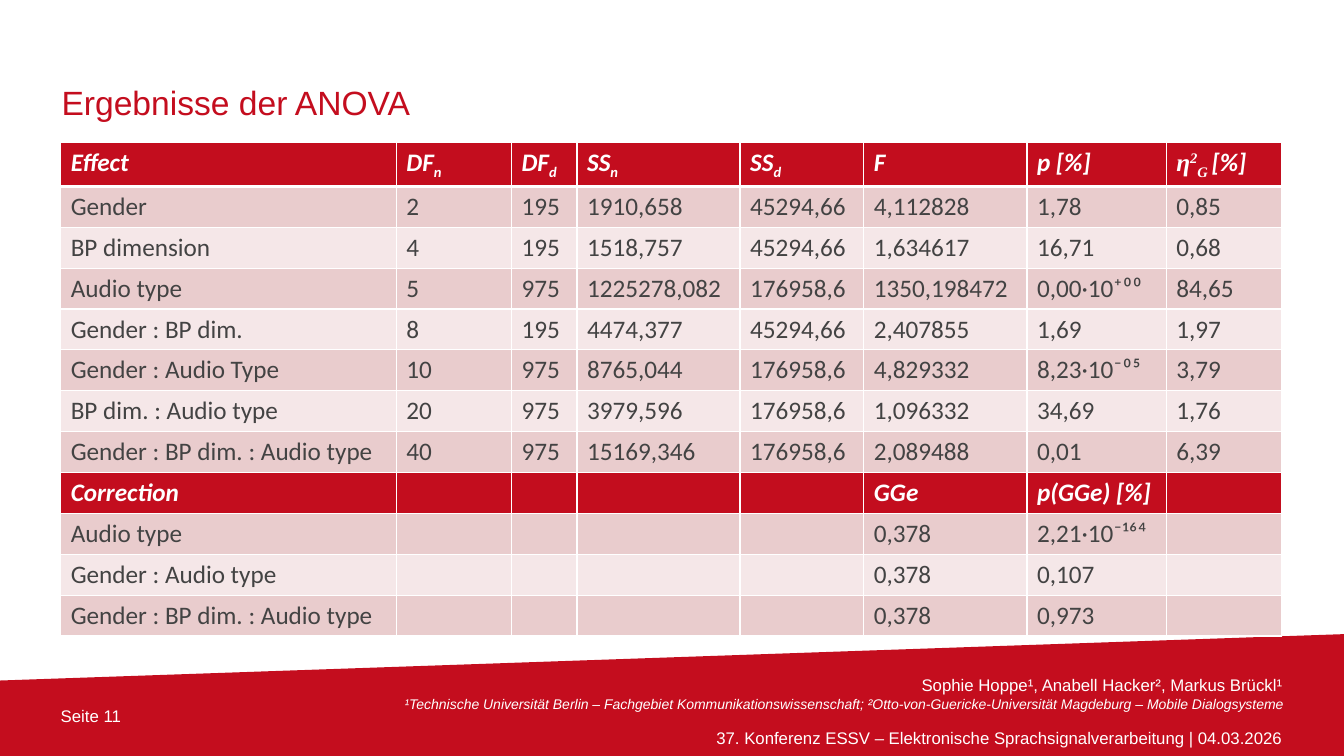
import pptx
import pptx.util
import pptx.dml.color
import pptx.enum.text
import pptx.oxml
import pptx.oxml.ns

Cm, Pt = pptx.util.Cm, pptx.util.Pt
Align = pptx.enum.text.PP_ALIGN
Anchor = pptx.enum.text.MSO_ANCHOR

# Content
TITLE = "Ergebnisse der ANOVA"
PAGE = "Seite 11"
# text, size, italic, space before
FOOTER = [
    ("Sophie Hoppe¹, Anabell Hacker², Markus Brückl¹", 12, False, 0),
    ("¹Technische Universität Berlin – Fachgebiet Kommunikationswissenschaft; "
     "²Otto-von-Guericke-Universität Magdeburg – Mobile Dialogsysteme", 10, True, 0),
    ("37. Konferenz ESSV – Elektronische Sprachsignalverarbeitung | 04.03.2026",
     12, False, 11.5),
]
SERIF = "Times New Roman"
# A cell is a string, or a list of (text, baseline %, font)
HEAD = [
    "Effect",
    [("DF", 0, "Calibri"), ("n", -25, "Calibri")],
    [("DF", 0, "Calibri"), ("d", -25, "Calibri")],
    [("SS", 0, "Calibri"), ("n", -25, "Calibri")],
    [("SS", 0, "Calibri"), ("d", -25, "Calibri")],
    "F",
    "p [%]",
    [("η", 0, SERIF), ("2", 30, SERIF), ("G ", -25, SERIF), ("[%]", 0, "Calibri")],
]
EFFECTS = [
    ("Gender", "2", "195", "1910,658", "45294,66", "4,112828", "1,78", "0,85"),
    ("BP dimension", "4", "195", "1518,757", "45294,66", "1,634617", "16,71", "0,68"),
    ("Audio type", "5", "975", "1225278,082", "176958,6", "1350,198472",
     "0,00·10⁺⁰⁰", "84,65"),
    ("Gender : BP dim.", "8", "195", "4474,377", "45294,66", "2,407855", "1,69", "1,97"),
    ("Gender : Audio Type", "10", "975", "8765,044", "176958,6", "4,829332",
     "8,23·10⁻⁰⁵", "3,79"),
    ("BP dim. : Audio type", "20", "975", "3979,596", "176958,6", "1,096332",
     "34,69", "1,76"),
    ("Gender : BP dim. : Audio type", "40", "975", "15169,346", "176958,6",
     "2,089488", "0,01", "6,39"),
]
# Only the first, F and p columns are used below the second heading
CHECKS = [
    ("Correction", "GGe", "p(GGe) [%]"),
    ("Audio type", "0,378", "2,21·10⁻¹⁶⁴"),
    ("Gender : Audio type", "0,378", "0,107"),
    ("Gender : BP dim. : Audio type", "0,378", "0,973"),
]
ROWS = [HEAD, *EFFECTS] + [(a, "", "", "", "", f, p, "") for a, f, p in CHECKS]
BANDS = {0, len(EFFECTS) + 1}
WIDTHS = [8.46, 2.9, 1.65, 4.11, 3.12, 4.11, 3.51, 2.9]
HIGH = 1.03
LEFT = 1.53
WIDE, TALL = 33.87, 19.05
RED, WHITE = "C40D1E", "FFFFFF"


def color(code):
    return pptx.dml.color.RGBColor.from_string(code)


def write(para, text, size, code, font="Arial", bold=False, slant=False):
    run = para.add_run()
    run.text = text
    face = run.font
    face.name, face.size, face.bold, face.italic = font, Pt(size), bold, slant
    face.color.rgb = color(code)
    return run


def frame(shape, anchor):
    body = shape.text_frame
    body.margin_left = body.margin_right = body.margin_top = body.margin_bottom = 0
    body.word_wrap = True
    body.auto_size = pptx.enum.text.MSO_AUTO_SIZE.NONE
    body.vertical_anchor = anchor
    return body


def border(cell, widths):
    props = cell._tc.get_or_add_tcPr()
    for side, width in zip("LRTB", widths):
        props.append(pptx.oxml.parse_xml(
            f'<a:ln{side} {pptx.oxml.ns.nsdecls("a")} w="{Pt(width)}"><a:solidFill>'
            f'<a:srgbClr val="{WHITE}"/></a:solidFill></a:ln{side}>'))


deck = pptx.Presentation()
deck.slide_width, deck.slide_height = Cm(WIDE), Cm(TALL)
slide = deck.slides.add_slide(deck.slide_layouts[5])
shapes = slide.shapes

# Slanted footer band
pen = shapes.build_freeform(Cm(0), Cm(17.15))
pen.add_line_segments([(Cm(WIDE), Cm(15.98)), (Cm(WIDE), Cm(TALL)), (Cm(0), Cm(TALL))])
wedge = pen.convert_to_shape()
wedge.shadow.inherit = False
wedge.fill.solid()
wedge.fill.fore_color.rgb = color(RED)
wedge.line.fill.background()

# Footer texts
page = frame(shapes.add_textbox(Cm(LEFT), Cm(17.78), Cm(3), Cm(0.53)), Anchor.MIDDLE)
write(page.paragraphs[0], PAGE, 12, WHITE)
foot = frame(shapes.add_textbox(Cm(4.52), Cm(16.99), Cm(27.81), Cm(1.88)), Anchor.MIDDLE)
for i, (text, size, slant, gap) in enumerate(FOOTER):
    para = foot.add_paragraph() if i else foot.paragraphs[0]
    para.alignment = Align.RIGHT
    if gap:
        para.space_before = Pt(gap)
    write(para, text, size, WHITE, slant=slant)

# Title
title = shapes.title
title.left, title.top, title.width, title.height = Cm(1.55), Cm(1.09), Cm(23.09), Cm(1.98)
para = frame(title, Anchor.BOTTOM).paragraphs[0]
para.alignment = Align.LEFT
para.line_spacing = Pt(28)
write(para, TITLE, 24, RED)

# Table
table = shapes.add_table(len(ROWS), len(WIDTHS), Cm(LEFT), Cm(3.58),
                         Cm(sum(WIDTHS)), Cm(HIGH * len(ROWS))).table
for col, width in zip(table.columns, WIDTHS):
    col.width = Cm(width)
for i, row in enumerate(ROWS):
    table.rows[i].height = Cm(HIGH)
    band = i in BANDS
    back = "C30D1E" if band else ("F5E7E8", "E9CCCD")[i % 2]
    ink = WHITE if band else "434343"
    for j, item in enumerate(row):
        cell = table.cell(i, j)
        border(cell, (1, 1, 3 if i == 1 else 1, 3 if i == 0 else 1))
        cell.fill.solid()
        cell.fill.fore_color.rgb = color(back)
        para = cell.text_frame.paragraphs[0]
        para.font.size = Pt(18)
        parts = [(item, 0, "Calibri")] if isinstance(item, str) else item
        for text, base, font in parts:
            if text:
                run = write(para, text, 18, ink, font, band, band)
                if base:
                    run._r.get_or_add_rPr().set("baseline", str(base * 1000))

deck.save("out.pptx")
